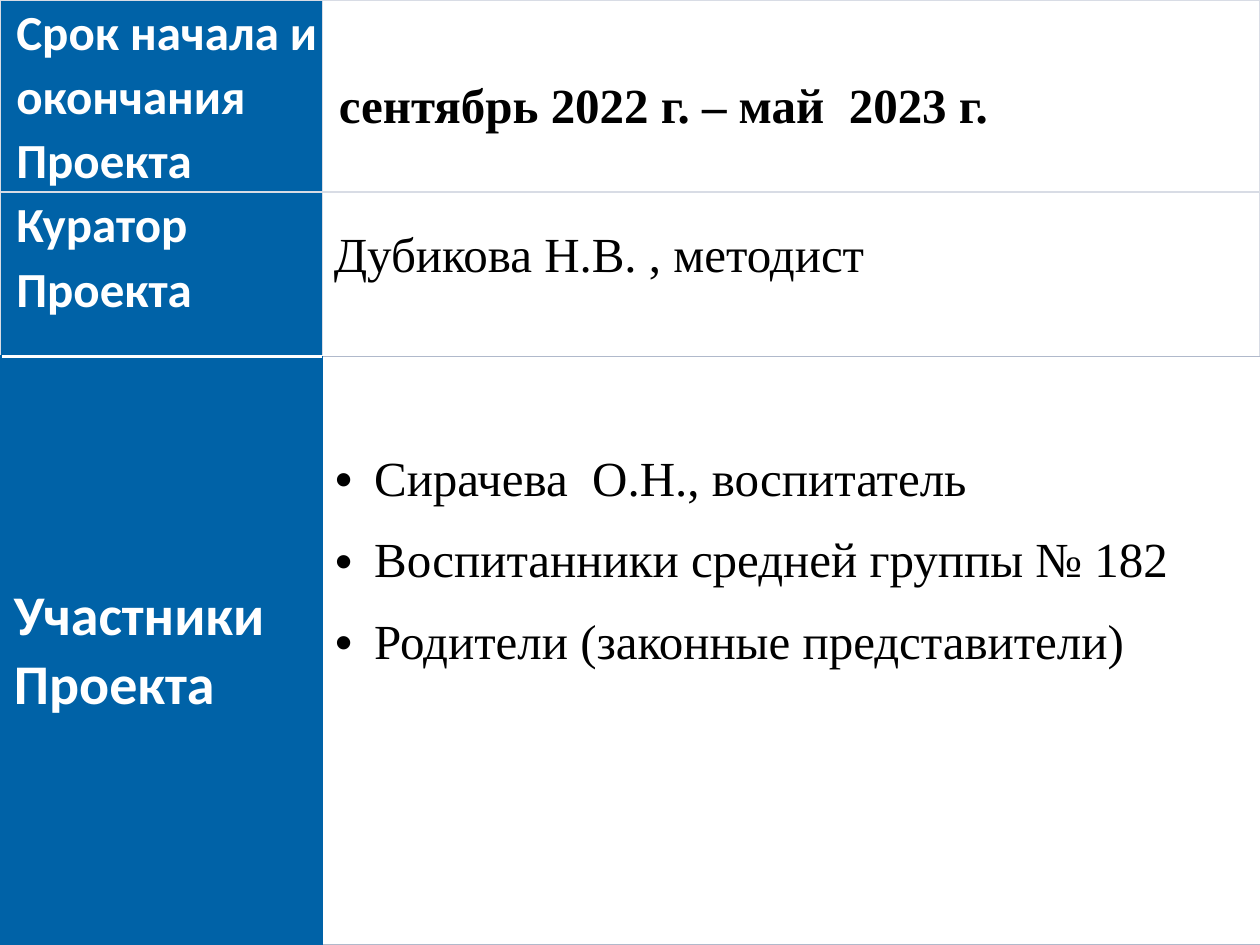
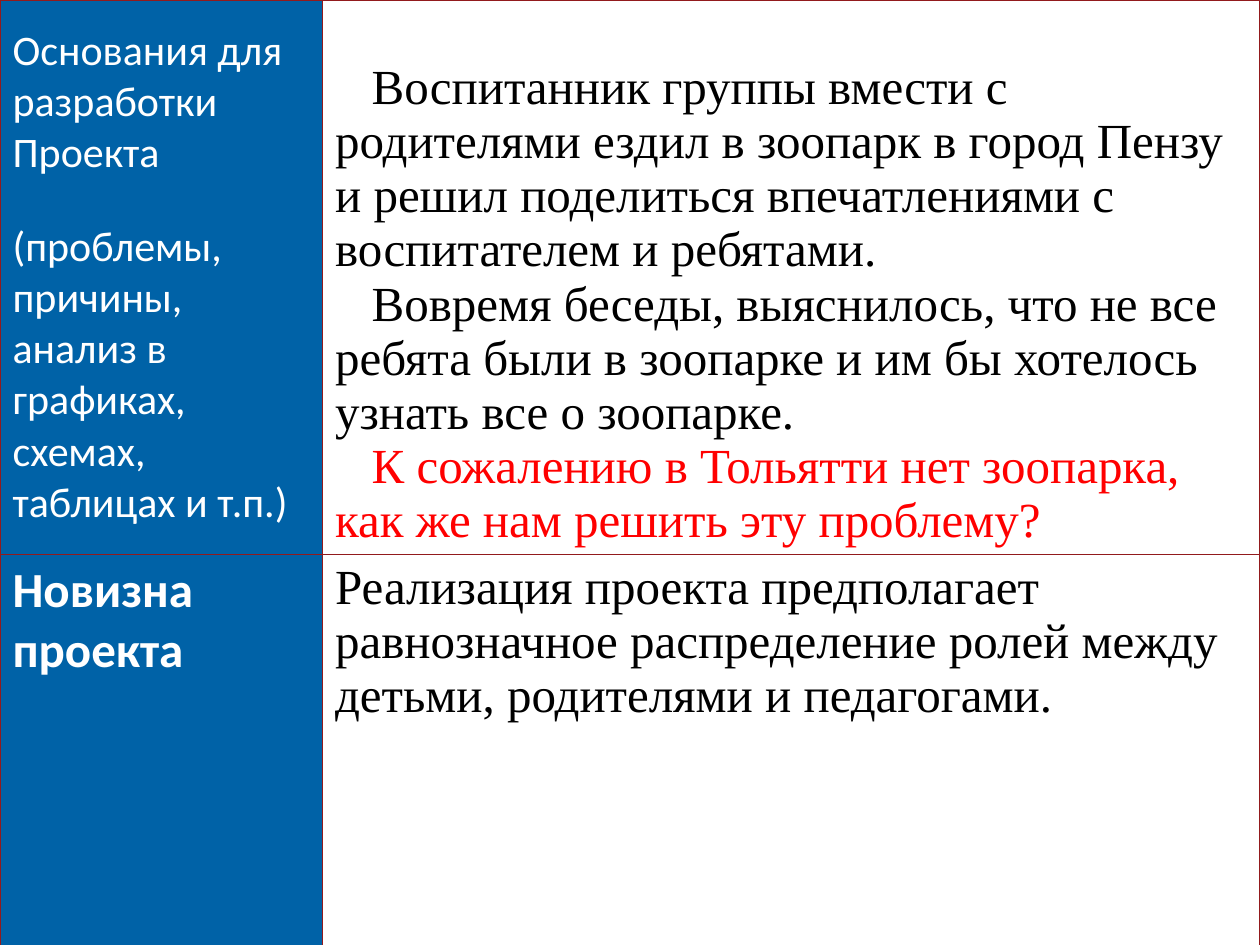
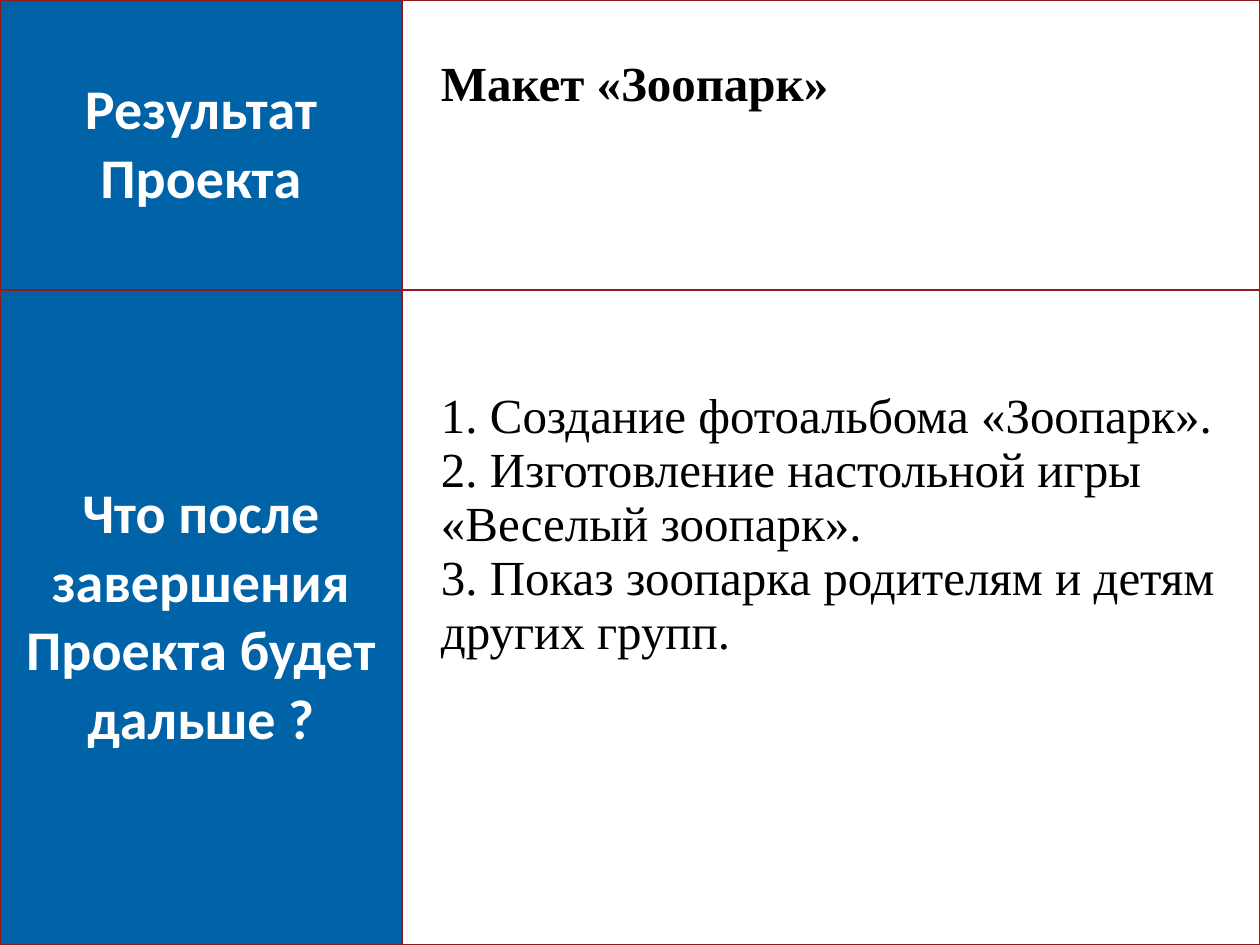
from lxml.etree import SubElement
from pptx import Presentation
from pptx.dml.color import RGBColor
from pptx.enum.text import MSO_ANCHOR, PP_ALIGN
from pptx.oxml import parse_xml
from pptx.oxml.ns import nsdecls, qn
from pptx.util import Inches, Pt

BLUE = RGBColor(0x00, 0x62, 0xA7)
WHITE = RGBColor(0xFF, 0xFF, 0xFF)
BLACK = RGBColor(0x00, 0x00, 0x00)
RED = RGBColor(0xFF, 0x00, 0x00)
MAROON = RGBColor(0x92, 0x1A, 0x1D)
PALE = RGBColor(0xD8, 0xDC, 0xE5)
GREY = RGBColor(0xB0, 0xB9, 0xCB)
TOP, MID = MSO_ANCHOR.TOP, MSO_ANCHOR.MIDDLE

deck = Presentation()
deck.slide_width, deck.slide_height = Inches(10), Inches(7.5)


def add_grid(slide, left, top, widths, heights, line):
    """Add a two-column table: blue labels on the left, white text on the right."""
    frame = slide.shapes.add_table(len(heights), 2, Inches(left), Inches(top),
                                   Inches(sum(widths)), Inches(sum(heights)))
    grid = frame.table
    grid.first_row = grid.horz_banding = False
    for col, width in zip(grid.columns, widths):
        col.width = Inches(width)
    for row, height in zip(grid.rows, heights):
        row.height = Inches(height)
        for cell, fill, edges in zip(row.cells, (BLUE, WHITE), line):
            cell.fill.solid()
            cell.fill.fore_color.rgb = fill
            for spot, (side, (colour, width)) in enumerate(zip("LRTB", edges)):
                edge = parse_xml(
                    f'<a:ln{side} {nsdecls("a")} w="{Pt(width)}"><a:solidFill>'
                    f'<a:srgbClr val="{colour}"/></a:solidFill></a:ln{side}>')
                cell._tc.get_or_add_tcPr().insert(spot, edge)
    return grid


def write(cell, lines, size=28, bold=False, label=False, anchor=TOP,
          inset=(0.1, 0.05, 0.1, 0.05), spacing=None):
    """Fill a cell with one paragraph per line; return the paragraphs."""
    cell.vertical_anchor = anchor
    (cell.margin_left, cell.margin_top,
     cell.margin_right, cell.margin_bottom) = map(Inches, inset)
    cell.text_frame.text = "\n".join(lines)
    for para in cell.text_frame.paragraphs:
        para.line_spacing = spacing
        for run in para.runs:
            font = run.font
            font.name = "Calibri" if label else "Times New Roman"
            font.size, font.bold = Pt(size), bold
            font.color.rgb = WHITE if label else BLACK
    return cell.text_frame.paragraphs


pale = [[(PALE, 1)] * 4] * 2
maroon = [[(MAROON, 1)] * 4] * 2
mixed = [[(BLUE, 1.5), (BLUE, 1), (WHITE, 1.5), (BLUE, 1.5)],
         [(BLUE, 1)] + [(GREY, 1)] * 3]

# Dates, curator and members
slide = deck.slides.add_slide(deck.slide_layouts[6])
grid = add_grid(slide, 0, 0, (2.56, 7.44), (1.52, 1.31), pale)
tight = (0.13, 0, 0.03, 0)
write(grid.cell(0, 0), ["Срок начала и окончания Проекта"], bold=True,
      label=True, anchor=MID, inset=tight, spacing=1.07)
write(grid.cell(0, 1), ["сентябрь 2022 г. – май  2023 г."], bold=True,
      inset=(0.13, 0.63, 0.03, 0))
write(grid.cell(1, 0), ["Куратор", "Проекта"], bold=True, label=True,
      inset=tight, spacing=1.07)
write(grid.cell(1, 1), ["Дубикова Н.В. , методист"], inset=(0.09, 0.29, 0.03, 0))

grid = add_grid(slide, 0.01, 2.83, (2.55, 7.45), (4.67,), mixed)
write(grid.cell(0, 0), ["Участники", "Проекта"], size=32, bold=True,
      label=True, anchor=MID)
members = ["Сирачева  О.Н., воспитатель", "Воспитанники средней группы № 182",
           "Родители (законные представители)"]
for para in write(grid.cell(0, 1), members, inset=(0.1, 0.55, 0.1, 0.05), spacing=1.5):
    props = para._p.get_or_add_pPr()
    props.set("marL", str(Inches(0.31)))
    props.set("indent", str(-Inches(0.31)))
    SubElement(props, qn("a:buFont")).set("typeface", "Arial")
    SubElement(props, qn("a:buChar")).set("char", "•")

# Grounds and novelty
slide = deck.slides.add_slide(deck.slide_layouts[6])
grid = add_grid(slide, 0, 0, (2.56, 7.44), (4.4, 3.46), maroon)
paras = write(grid.cell(0, 0), [
    "Основания для разработки Проекта",
    "(проблемы, причины, анализ в графиках, схемах, таблицах и т.п.)",
], size=24, label=True, anchor=MID)
paras[1].space_before = Pt(24)
paras = write(grid.cell(0, 1), [
    "Воспитанник группы вмести с родителями ездил в зоопарк в город Пензу "
    "и решил поделиться впечатлениями с воспитателем и ребятами.",
    "Вовремя беседы, выяснилось, что не все ребята были в зоопарке "
    "и им бы хотелось узнать все о зоопарке.",
    "К сожалению в Тольятти нет зоопарка, как же нам решить эту проблему?",
], inset=(0.1, 0.48, 0.1, 0.03))
for para in paras:
    para._p.get_or_add_pPr().set("indent", str(Inches(0.29)))
paras[-1].runs[0].font.color.rgb = RED
write(grid.cell(1, 0), ["Новизна проекта"], bold=True, label=True)
write(grid.cell(1, 1), ["Реализация проекта предполагает равнозначное распределение "
                        "ролей между детьми, родителями и педагогами."])

# Result and next steps
slide = deck.slides.add_slide(deck.slide_layouts[6])
grid = add_grid(slide, 0, 0, (3.19, 6.81), (2.3, 5.2), maroon)
labels = ["Результат Проекта", "Что после завершения Проекта будет дальше ?"]
for row, label in enumerate(labels):
    paras = write(grid.cell(row, 0), [label], size=32, bold=True,
                  label=True, anchor=MID)
    paras[0].alignment = PP_ALIGN.CENTER
write(grid.cell(0, 1), ["Макет «Зоопарк»"], bold=True, inset=(0.31, 0.46, 0.1, 0.05))
write(grid.cell(1, 1), [
    "1. Создание фотоальбома «Зоопарк».",
    "2. Изготовление настольной игры «Веселый зоопарк».",
    "3. Показ зоопарка родителям и детям других групп.",
], inset=(0.31, 0.79, 0.1, 0.05))

deck.save("out.pptx")
